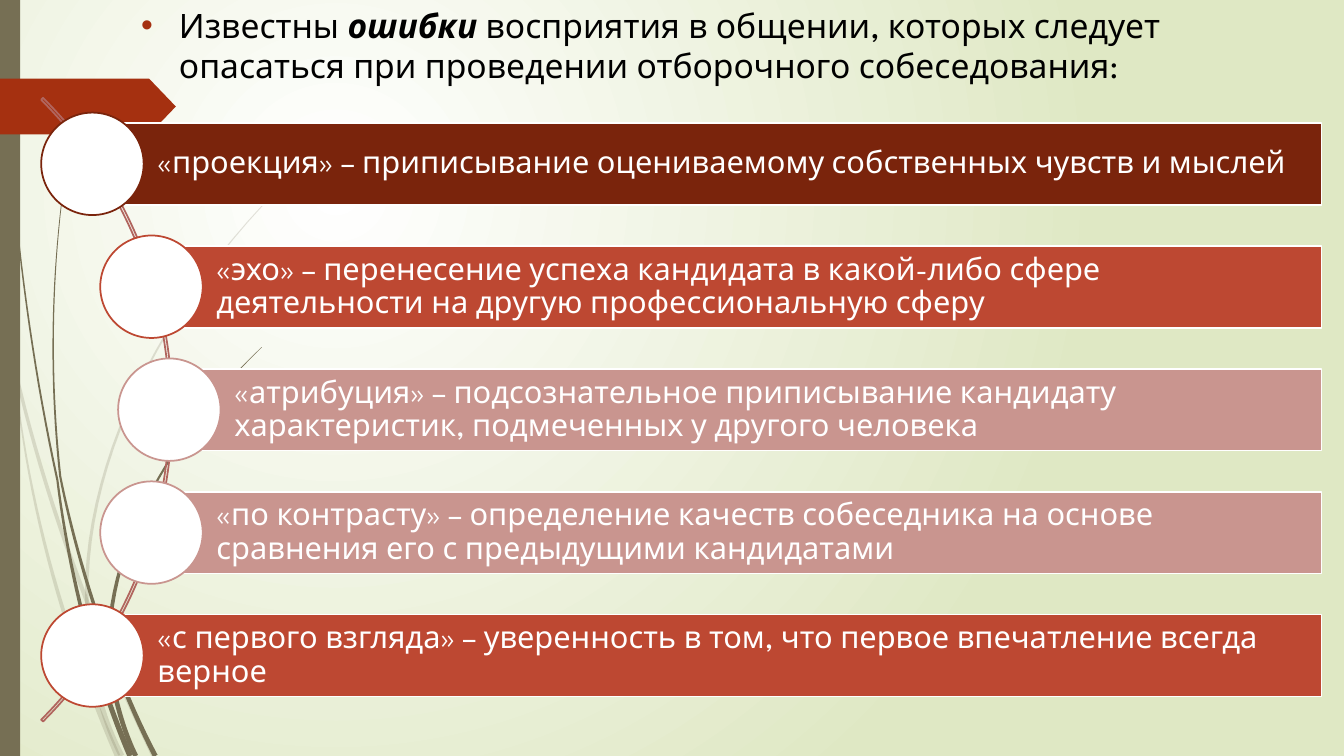
import math
from dataclasses import dataclass

import pptx
import pptx.dml.color
import pptx.enum.shapes
import pptx.enum.text
import pptx.oxml.ns
import pptx.util
from lxml import etree

Pt = pptx.util.Pt
qn = pptx.oxml.ns.qn
SHAPES = pptx.enum.shapes.MSO_SHAPE

FONT = "League Spartan"
COLOURS = {
    "white": "FFFFFF",
    "black": "000000",
    "background": "DFE8C4",
    "grass": "766F54",
    "tag": "A53010",
    "arc": "B1655E",
    "dark": "7A240C",
    "brick": "BD4832",
    "rose": "C9958F",
}
SLIDE_WIDTH, SLIDE_HEIGHT = 960, 540

# Five rows, whose circles follow a curve
ERRORS = [
    ("dark", "«проекция» – приписывание оцениваемому собственных чувств и мыслей"),
    ("brick", "«эхо» – перенесение успеха кандидата в какой-либо сфере деятельности "
              "на другую профессиональную сферу"),
    ("rose", "«атрибуция» – подсознательное приписывание кандидату характеристик, "
             "подмеченных у другого человека"),
    ("rose", "«по контрасту» – определение качеств собеседника на основе сравнения его "
             "с предыдущими кандидатами"),
    ("brick", "«с первого взгляда» – уверенность в том, что первое впечатление "
              "всегда верное"),
]
ROW_PITCH = 87.8
MIDDLE_ROW = len(ERRORS) // 2
MIDDLE_LEFT = 121
CURVE_RADIUS = 308
BAR_RIGHT = 944
BAR_HEIGHT = 58.5
CIRCLE_SIZE = 73.2
ARC_SIZE = 630
ARC_LEFT = -507


@dataclass
class Blade:
    """A blade of grass: a cubic curve from tip to root that grows wider."""
    tip: tuple
    upper_pull: tuple
    lower_pull: tuple
    root: tuple
    tip_width: float
    root_width: float

    def edges(self, steps=24):
        """Walk down one side of the curve and back up the other."""
        left, right = [], []
        for step in range(steps + 1):
            t = step / steps
            u = 1 - t
            x, y = (u**3 * a + 3 * u*u * t * b + 3 * u * t*t * c + t**3 * d
                    for a, b, c, d in self.axes())
            slope_x, slope_y = (u*u * (b - a) + 2 * u * t * (c - b) + t*t * (d - c)
                                for a, b, c, d in self.axes())
            half_width = (u * self.tip_width + t * self.root_width) / 2
            factor = half_width / math.hypot(slope_x, slope_y)
            left.append((x - slope_y * factor, y + slope_x * factor))
            right.append((x + slope_y * factor, y - slope_x * factor))
        return left + right[::-1]

    def axes(self):
        return list(zip(self.tip, self.upper_pull, self.lower_pull, self.root))


PALE_BLADES = [
    Blade((0, 209), (18, 317), (58, 432), (110, 540), 2, 3.5),         # left
    Blade((9, 252), (18, 353), (43, 446), (84, 540), 0.5, 4),          # inner
    Blade((225, 110), (122, 202), (61, 324), (62, 425), 0.3, 2.5),     # arching
    Blade((62, 425), (62, 461), (68, 504), (87, 540), 2.5, 4),         # its stem
]
DARK_BLADES = [
    Blade((2.5, 0), (4, 115), (18, 238), (41, 343), 0.5, 1.5),         # left
    Blade((41, 343), (50, 414), (68, 482), (93, 540), 1.5, 4),         # its stem
    Blade((50, 102), (36, 187), (35, 266), (43, 340), 0.3, 1.5),       # upright
    Blade((43, 340), (54, 396), (79, 479), (111, 540), 1.5, 3.5),      # its stem
    Blade((187, 248), (122, 310), (79, 389), (78, 458), 0.3, 3),       # arching
    Blade((78, 458), (77, 482), (86, 518), (97, 540), 3, 3.5),         # its stem
]


def rgb(name):
    return pptx.dml.color.RGBColor.from_string(COLOURS[name])


def style_shape(shape, fill=None, line=None):
    shape.shadow.inherit = False
    if fill:
        shape.fill.solid()
        shape.fill.fore_color.rgb = rgb(fill)
    else:
        shape.fill.background()
    if line:
        shape.line.color.rgb = rgb(line)
        shape.line.width = Pt(1.25)
    else:
        shape.line.fill.background()


def add_preset(shapes, kind, left, top, width, height, fill=None, line=None):
    shape = shapes.add_shape(kind, Pt(left), Pt(top), Pt(width), Pt(height))
    style_shape(shape, fill, line)
    return shape


def add_blade(shapes, blade, opacity):
    start, *others = [(Pt(x), Pt(y)) for x, y in blade.edges()]
    builder = shapes.build_freeform(*start)
    builder.add_line_segments(others, close=True)
    shape = builder.convert_to_shape()
    style_shape(shape, "grass")
    if opacity < 100:
        colour = shape._element.spPr.find(qn("a:solidFill"))[0]
        etree.SubElement(colour, qn("a:alpha"), val=str(opacity * 1000))


def add_run(paragraph, text, size, colour, emphasis=False):
    run = paragraph.add_run()
    run.text = text
    run.font.name = FONT
    run.font.size = Pt(size)
    run.font.bold = run.font.italic = emphasis
    run.font.color.rgb = rgb(colour)


def set_background(slide):
    fill = slide.background.fill
    fill.gradient()
    for stop, name in zip(fill.gradient_stops, ("white", "background")):
        stop.color.rgb = rgb(name)
    # Radial instead of linear
    gradient = slide._element.find(".//" + qn("a:gradFill"))
    gradient.remove(gradient.find(qn("a:lin")))
    circle = etree.SubElement(gradient, qn("a:path"), path="circle")
    etree.SubElement(circle, qn("a:fillToRect"), l="50000", t="50000", r="100000", b="100000")


def add_decoration(slide):
    for blades, opacity in ((PALE_BLADES, 20), (DARK_BLADES, 100)):
        group = slide.shapes.add_group_shape()
        for blade in blades:
            add_blade(group.shapes, blade, opacity)
    add_preset(slide.shapes, SHAPES.RECTANGLE, 0, 0, 14.4, SLIDE_HEIGHT, "grass")
    tag = add_preset(slide.shapes, SHAPES.PENTAGON, 0, 56.2, 125.6, 39.8, "tag")
    tag.adjustments[0] = 0.48


def fill_body(body):
    body.left, body.top, body.width, body.height = Pt(93.6), Pt(0), Pt(837.4), Pt(80.6)
    frame = body.text_frame
    frame.auto_size = pptx.enum.text.MSO_AUTO_SIZE.NONE
    frame.vertical_anchor = pptx.enum.text.MSO_ANCHOR.TOP
    paragraph = frame.paragraphs[0]
    paragraph.space_before = Pt(10)
    add_run(paragraph, "Известны ", 24, "black")
    add_run(paragraph, "ошибки", 24, "black", emphasis=True)
    add_run(paragraph, " восприятия в общении, которых следует опасаться при проведении "
                       "отборочного собеседования:", 24, "black")
    # Hanging bullet
    properties = paragraph._p.get_or_add_pPr()
    properties.set("marL", str(Pt(27)))
    properties.set("indent", str(Pt(-27)))
    bullet_colour = etree.SubElement(properties, qn("a:buClr"))
    etree.SubElement(bullet_colour, qn("a:srgbClr"), val=COLOURS["tag"])
    etree.SubElement(properties, qn("a:buChar"), char="•")


def add_arc(shapes):
    middle = ROW_PITCH * (MIDDLE_ROW + 1) + BAR_HEIGHT / 2
    arc = add_preset(shapes, SHAPES.BLOCK_ARC, ARC_LEFT, middle - ARC_SIZE / 2,
                     ARC_SIZE, ARC_SIZE, line="arc")
    # Start angle, end angle, thickness
    for index, value in enumerate((189, 27, 0.003)):
        arc.adjustments[index] = value


def add_error(shapes, row, colour, text):
    top = ROW_PITCH * (row + 1)
    distance = ROW_PITCH * (row - MIDDLE_ROW)
    left = MIDDLE_LEFT - CURVE_RADIUS + math.sqrt(CURVE_RADIUS**2 - distance**2)
    bar = add_preset(shapes, SHAPES.RECTANGLE, left, top, BAR_RIGHT - left, BAR_HEIGHT,
                     colour, "white")
    frame = bar.text_frame
    frame.word_wrap = True
    frame.vertical_anchor = pptx.enum.text.MSO_ANCHOR.MIDDLE
    frame.margin_left = Pt(46.4)
    frame.margin_top = frame.margin_right = frame.margin_bottom = Pt(4.4)
    paragraph = frame.paragraphs[0]
    paragraph.alignment = pptx.enum.text.PP_ALIGN.LEFT
    paragraph.line_spacing = 0.9
    add_run(paragraph, text, 22, "white")
    add_preset(shapes, SHAPES.OVAL, left - CIRCLE_SIZE / 2, top + (BAR_HEIGHT - CIRCLE_SIZE) / 2,
               CIRCLE_SIZE, CIRCLE_SIZE, "white", colour)


def main():
    presentation = pptx.Presentation()
    presentation.slide_width, presentation.slide_height = Pt(SLIDE_WIDTH), Pt(SLIDE_HEIGHT)
    slide = presentation.slides.add_slide(presentation.slide_layouts[1])
    title, body = slide.placeholders
    title._element.getparent().remove(title._element)

    set_background(slide)
    add_decoration(slide)

    # Introductory line, in front of the decoration
    fill_body(body)
    body._element.getparent().append(body._element)

    # Arc with the five errors of perception
    diagram = slide.shapes.add_group_shape().shapes
    add_arc(diagram)
    for row, (colour, text) in enumerate(ERRORS):
        add_error(diagram, row, colour, text)

    presentation.save("out.pptx")


if __name__ == "__main__":
    main()
